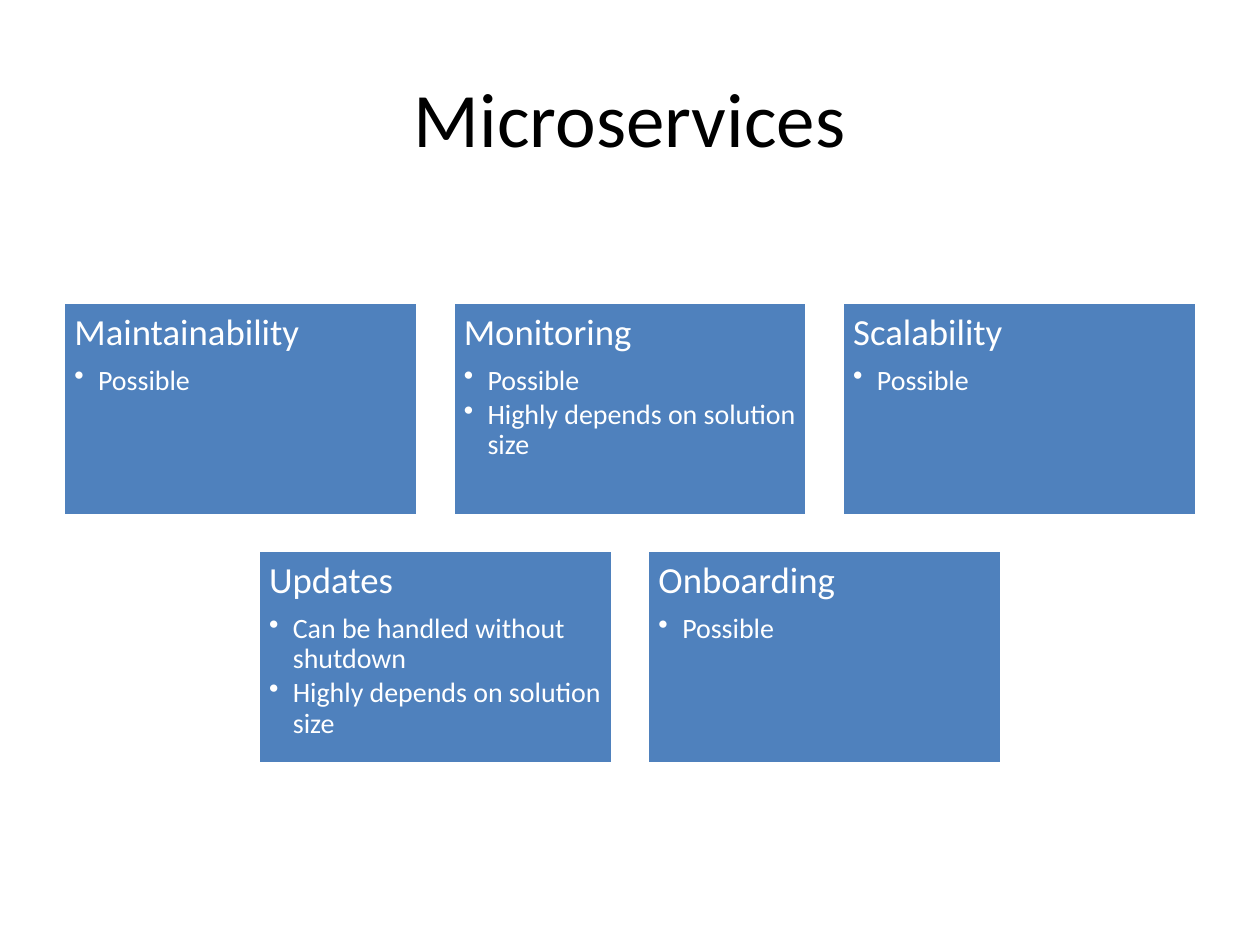
from dataclasses import dataclass

from lxml.etree import SubElement
from pptx import Presentation
from pptx.dml.color import RGBColor
from pptx.enum.shapes import MSO_SHAPE
from pptx.enum.text import MSO_ANCHOR, PP_ALIGN
from pptx.oxml.ns import qn
from pptx.slide import Slide
from pptx.util import Cm, Pt

BLUE = RGBColor(0x4F, 0x81, 0xBD)
WHITE = RGBColor(0xFF, 0xFF, 0xFF)
BLACK = RGBColor(0x00, 0x00, 0x00)
FONT = "Calibri"

SLIDE_WIDTH, SLIDE_HEIGHT = 25.4, 19.05
CARD_WIDTH, CARD_HEIGHT = 7.14, 4.29
CARD_GAP = 0.71
CARDS_TOP = 6.1
CARD_INSET = Cm(0.22)
BULLET_INDENT = Cm(0.48)


@dataclass
class Card:
    heading: str
    points: list[str]


CARD_ROWS = [
    [
        Card("Maintainability", ["Possible"]),
        Card("Monitoring", ["Possible", "Highly depends on solution size"]),
        Card("Scalability", ["Possible"]),
    ],
    [
        Card("Updates", ["Can be handled without shutdown", "Highly depends on solution size"]),
        Card("Onboarding", ["Possible"]),
    ],
]


def style_font(paragraph, size: float, color: RGBColor) -> None:
    for run in paragraph.runs:
        run.font.name = FONT
        run.font.size = Pt(size)
        run.font.color.rgb = color


def format_card_line(paragraph, size: float, space_after: float) -> None:
    paragraph.alignment = PP_ALIGN.LEFT
    paragraph.line_spacing = 0.9
    paragraph.space_after = Pt(space_after)
    style_font(paragraph, size, WHITE)


def add_bullet(paragraph) -> None:
    paragraph.level = 1
    properties = paragraph._p.get_or_add_pPr()
    properties.set("marL", str(BULLET_INDENT))
    properties.set("indent", str(-BULLET_INDENT))
    SubElement(properties, qn("a:buChar")).set("char", "•")


def draw_card(slide: Slide, card: Card, left: float, top: float) -> None:
    shape = slide.shapes.add_shape(
        MSO_SHAPE.RECTANGLE, Cm(left), Cm(top), Cm(CARD_WIDTH), Cm(CARD_HEIGHT)
    )
    shape.shadow.inherit = False
    shape.fill.solid()
    shape.fill.fore_color.rgb = BLUE
    shape.line.color.rgb = WHITE
    shape.line.width = Pt(2)

    frame = shape.text_frame
    frame.word_wrap = True
    frame.vertical_anchor = MSO_ANCHOR.TOP
    frame.margin_left = frame.margin_right = CARD_INSET
    frame.margin_top = frame.margin_bottom = CARD_INSET
    frame.text = "\n".join([card.heading, *card.points])
    heading, *points = frame.paragraphs
    format_card_line(heading, 21, 7.35)
    for point in points:
        format_card_line(point, 16, 2.4)
        add_bullet(point)


def draw_card_row(slide: Slide, cards: list[Card], top: float) -> None:
    """Draw the cards side by side, centred on the slide."""
    pitch = CARD_WIDTH + CARD_GAP
    row_left = (SLIDE_WIDTH - len(cards) * pitch + CARD_GAP) / 2
    for column, card in enumerate(cards):
        draw_card(slide, card, row_left + column * pitch, top)


def draw_title(slide: Slide, text: str) -> None:
    title = slide.shapes.title
    title.left, title.top = Cm(1.27), Cm(0.76)
    title.width, title.height = Cm(22.86), Cm(3.18)
    title.text_frame.text = text
    title.text_frame.vertical_anchor = MSO_ANCHOR.MIDDLE
    paragraph = title.text_frame.paragraphs[0]
    paragraph.alignment = PP_ALIGN.CENTER
    style_font(paragraph, 44, BLACK)


def main() -> None:
    presentation = Presentation()
    presentation.slide_width = Cm(SLIDE_WIDTH)
    presentation.slide_height = Cm(SLIDE_HEIGHT)
    title_only = presentation.slide_layouts.get_by_name("Title Only")
    slide = presentation.slides.add_slide(title_only)
    draw_title(slide, "Microservices")
    for row, cards in enumerate(CARD_ROWS):
        draw_card_row(slide, cards, CARDS_TOP + row * (CARD_HEIGHT + CARD_GAP))
    presentation.save("out.pptx")


if __name__ == "__main__":
    main()
